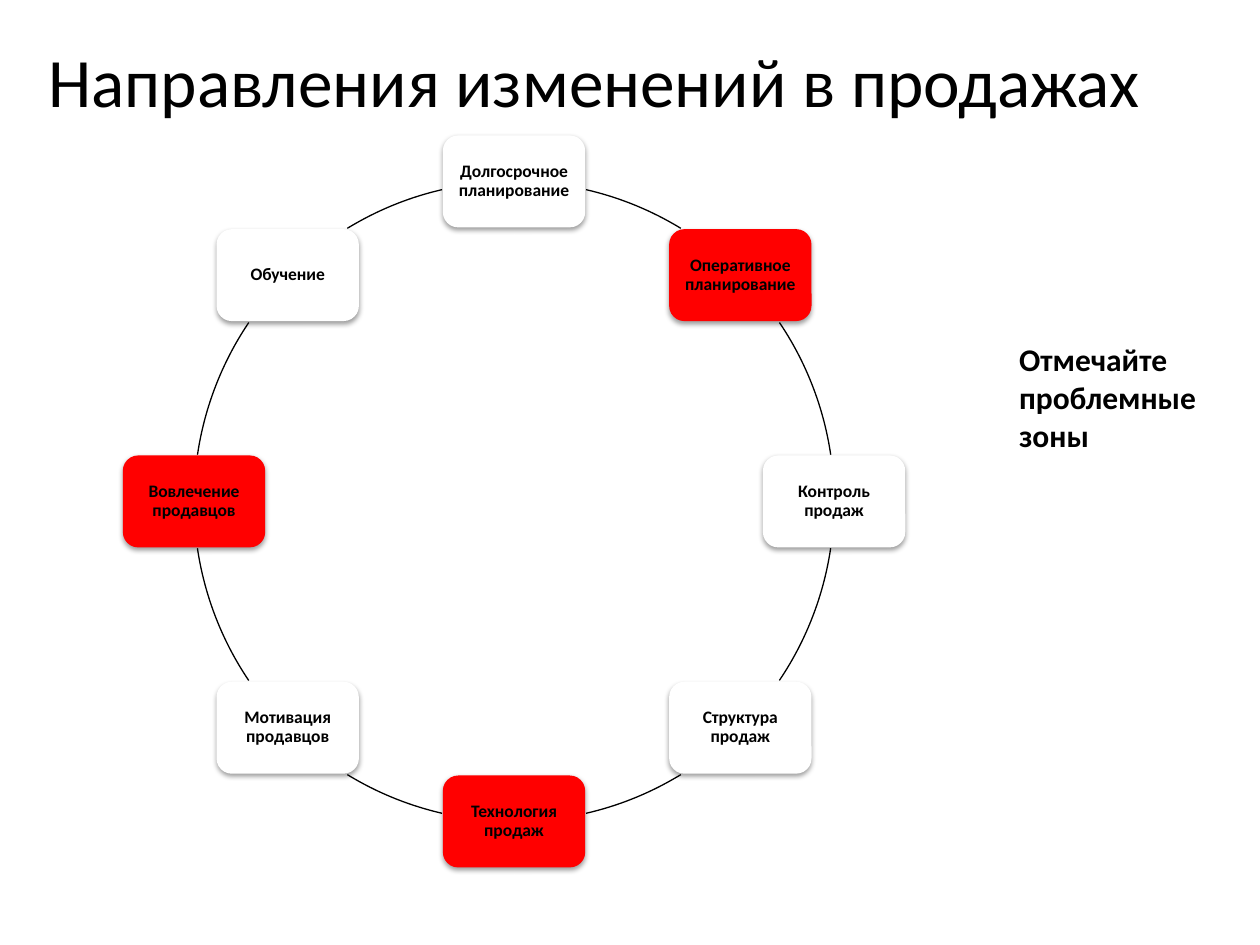
import math
from lxml import etree
from pptx import Presentation
from pptx.dml.color import RGBColor
from pptx.enum import shapes, text
from pptx.oxml import ns
from pptx.util import Inches, Pt

COLORS = {"ink": "000000", "plain": "FFFFFF", "problem": "FF0000"}
FONT = "Calibri"
CENTER_X, CENTER_Y, RADIUS = 4.08, 3.98, 2.54
BOX_WIDTH, BOX_HEIGHT = 1.13, 0.73
DIRECTIONS = [
    ("Долгосрочное планирование", "plain"),
    ("Оперативное планирование", "problem"),
    ("Контроль продаж", "plain"),
    ("Структура продаж", "plain"),
    ("Технология продаж", "problem"),
    ("Мотивация продавцов", "plain"),
    ("Вовлечение продавцов", "problem"),
    ("Обучение", "plain"),
]
ARCS = [(8.4, 34), (58.6, 77), (103, 121.4), (146, 171.6),
        (188.4, 214), (238.6, 257), (283, 301.4), (326, 351.6)]


def write(frame, words, size, bold, align):
    frame.word_wrap = True
    para = frame.paragraphs[0]
    para.text = words
    para.alignment = align
    para.font.name = FONT
    para.font.size = Pt(size)
    para.font.bold = bold
    para.font.color.rgb = RGBColor.from_string(COLORS["ink"])
    return para


def add_soft_shadow(shape):
    shape.shadow.inherit = False
    effects = shape._element.spPr.find(ns.qn("a:effectLst"))
    shadow = etree.SubElement(effects, ns.qn("a:outerShdw"), blurRad=str(Pt(3.1)),
                              dist=str(Pt(1.6)), dir="5400000", rotWithShape="0")
    color = etree.SubElement(shadow, ns.qn("a:srgbClr"), val=COLORS["ink"])
    etree.SubElement(color, ns.qn("a:alpha"), val="38000")


deck = Presentation()
deck.slide_width, deck.slide_height = Inches(10), Inches(7.5)
page = deck.slides.add_slide(deck.slide_layouts[5])

title = page.shapes.title
title.left, title.top = Inches(0.28), Inches(0.01)
title.width, title.height = Inches(9), Inches(1.25)
title.text_frame.vertical_anchor = text.MSO_ANCHOR.MIDDLE
title.text_frame.auto_size = text.MSO_AUTO_SIZE.NONE
write(title.text_frame, "Направления изменений в продажах ", 39.6, False, text.PP_ALIGN.CENTER)

for start, end in ARCS:
    arc = page.shapes.add_shape(
        shapes.MSO_SHAPE.ARC, Inches(CENTER_X - RADIUS), Inches(CENTER_Y - RADIUS),
        Inches(2 * RADIUS), Inches(2 * RADIUS))
    arc.adjustments[0] = start * 0.6
    arc.adjustments[1] = end * 0.6
    arc.fill.background()
    arc.line.color.rgb = RGBColor.from_string(COLORS["ink"])
    arc.line.width = Pt(0.75)
    arc.shadow.inherit = False

for index, (words, state) in enumerate(DIRECTIONS):
    angle = math.radians(index * 360 / len(DIRECTIONS) - 90)
    left = CENTER_X + RADIUS * math.cos(angle) - BOX_WIDTH / 2
    top = CENTER_Y + RADIUS * math.sin(angle) - BOX_HEIGHT / 2
    box = page.shapes.add_shape(shapes.MSO_SHAPE.ROUNDED_RECTANGLE, Inches(left), Inches(top),
                                Inches(BOX_WIDTH), Inches(BOX_HEIGHT))
    box.fill.solid()
    box.fill.fore_color.rgb = RGBColor.from_string(COLORS[state])
    box.line.fill.background()
    add_soft_shadow(box)
    frame = box.text_frame
    frame.margin_left = frame.margin_right = Inches(0.04)
    frame.margin_top = frame.margin_bottom = Inches(0.04)
    frame.vertical_anchor = text.MSO_ANCHOR.MIDDLE
    write(frame, words, 10, True, text.PP_ALIGN.CENTER).line_spacing = 0.9

note = page.shapes.add_textbox(Inches(7.99), Inches(2.65), Inches(1.73), Inches(1.01))
note.text_frame.auto_size = text.MSO_AUTO_SIZE.SHAPE_TO_FIT_TEXT
write(note.text_frame, "Отмечайте проблемные зоны", 18, True, text.PP_ALIGN.LEFT)

deck.save("out.pptx")
